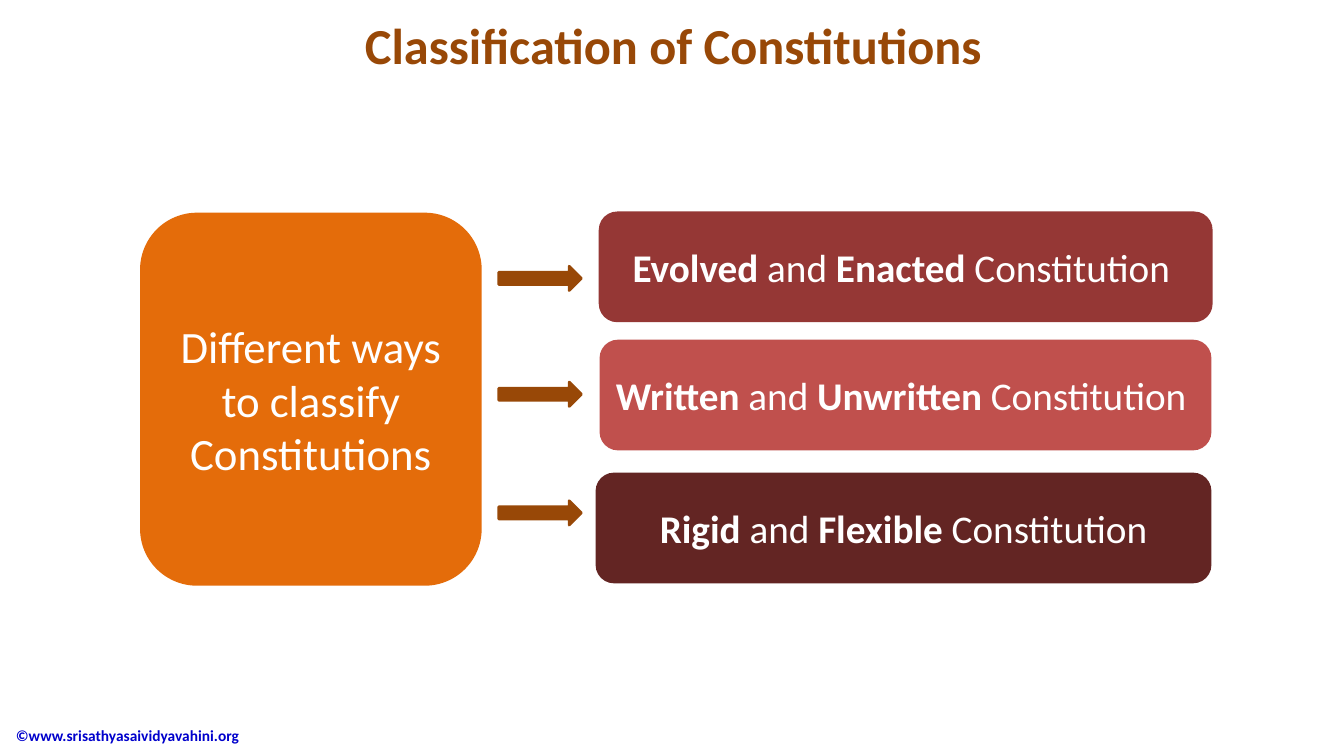
from dataclasses import dataclass

from pptx import Presentation
from pptx.dml.color import RGBColor as Color
from pptx.enum.shapes import MSO_SHAPE as Preset
from pptx.enum.text import MSO_ANCHOR as Anchor, MSO_AUTO_SIZE as AutoSize, PP_ALIGN as Align
from pptx.util import Cm, Pt


@dataclass(frozen=True)
class Theme:
    """Colours, font and type sizes of the slide."""
    font: str = "Calibri"
    brown: str = "984807"
    orange: str = "E46C0A"
    brick: str = "953735"
    rose: str = "C0504D"
    maroon: str = "632523"
    white: str = "FFFFFF"
    blue: str = "0000CC"
    title: int = 36
    topic: int = 32
    category: int = 28
    credit: int = 11


THEME = Theme()

CATEGORIES = [
    ((15.09, 5.33, 15.47), 6.71, THEME.brick,
     [("Evolved", True), (" and ", False), ("Enacted", True), (" Constitution ", False)]),
    ((15.11, 8.56, 15.42), 9.63, THEME.rose,
     [("Written", True), (" and ", False), ("Unwritten ", True), ("Constitution ", False)]),
    ((15.01, 11.91, 15.52), 12.62, THEME.maroon,
     [("Rigid", True), (" and ", False), ("Flexible", True), (" Constitution", False)]),
]


def apply_format(target, values):
    """Set each named attribute of the target."""
    for name, value in values.items():
        setattr(target, name, value)


def write_text(shape, runs, size, color, align=Align.CENTER):
    """Write one paragraph of (text, bold) runs, vertically centred."""
    apply_format(shape.text_frame, {
        "word_wrap": True, "auto_size": AutoSize.NONE, "vertical_anchor": Anchor.MIDDLE})
    paragraph = shape.text_frame.paragraphs[0]
    paragraph.alignment = align
    for text, bold in runs:
        run = paragraph.add_run()
        run.text = text
        apply_format(run.font, {"name": THEME.font, "size": Pt(size), "bold": bold})
        run.font.color.rgb = Color.from_string(color)


def add_title(slide, text):
    """Move and fill the title placeholder."""
    title = slide.shapes.title
    apply_format(title, {
        "left": Cm(4.06), "top": Cm(0.2), "width": Cm(25.83), "height": Cm(1.83)})
    write_text(title, [(text, True)], THEME.title, THEME.brown)


def add_filled_shape(slide, preset, box, color):
    """Add a flat preset shape without an outline."""
    shape = slide.shapes.add_shape(preset, *map(Cm, box))
    shape.shadow.inherit = False
    shape.fill.solid()
    shape.fill.fore_color.rgb = Color.from_string(color)
    shape.line.fill.background()
    return shape


def add_panel(slide, box, color, runs, size):
    """Add a rounded panel with centred white text."""
    panel = add_filled_shape(slide, Preset.FLOWCHART_ALTERNATE_PROCESS, box, color)
    write_text(panel, runs, size, THEME.white)


def add_arrow(slide, top):
    """Add a block arrow from the topic to a category."""
    arrow = add_filled_shape(slide, Preset.RIGHT_ARROW, (12.57, top, 2.08, 0.61), THEME.brown)
    arrow.line.color.rgb = Color.from_string(THEME.brown)
    arrow.line.width = Pt(2)


def add_credit(slide, text):
    """Add the copyright line at the bottom left."""
    credit = slide.shapes.add_textbox(Cm(0.15), Cm(18.03), Cm(8.97), Cm(1.02))
    write_text(credit, [(text, True)], THEME.credit, THEME.blue, Align.LEFT)


def main():
    """Build and save the slide."""
    presentation = Presentation()
    apply_format(presentation, {"slide_width": Cm(33.87), "slide_height": Cm(19.05)})
    slide = presentation.slides.add_slide(presentation.slide_layouts[5])
    add_credit(slide, "©www.srisathyasaividyavahini.org")
    add_title(slide, "Classification of Constitutions")
    add_panel(slide, (3.53, 5.36, 8.61, 9.4), THEME.orange,
              [("Different ways to classify Constitutions", False)], THEME.topic)
    for position, arrow_top, color, runs in CATEGORIES:
        add_panel(slide, (*position, 2.79), color, runs, THEME.category)
        add_arrow(slide, arrow_top)
    presentation.save("out.pptx")


if __name__ == "__main__":
    main()
